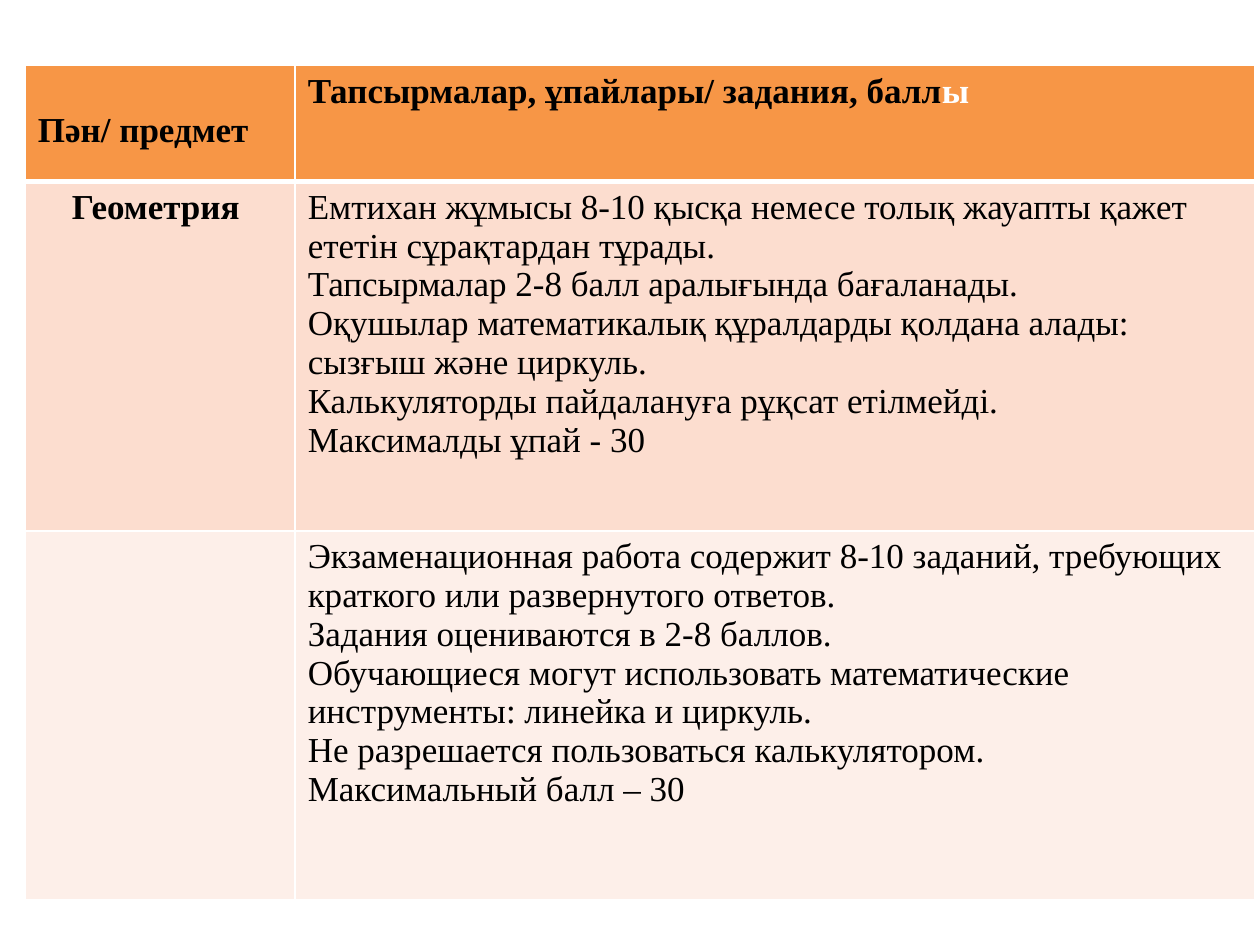
"""Build the geometry exam slide: one table of tasks and scores."""
from dataclasses import dataclass
from itertools import product

from lxml import etree
from pptx import Presentation
from pptx import util as u
from pptx.dml import color
from pptx.enum import text
from pptx.oxml import ns
from pptx.table import _Cell as TableCell


@dataclass(frozen=True)
class Theme:
    font: str = "Times New Roman"
    size: u.Pt = u.Pt(20)
    ink: str = "000000"
    line: str = "FFFFFF"
    header: str = "F79646"
    rows: tuple[str, ...] = ("F79646", "FCDDCF", "FDEFE9")
    thin: u.Pt = u.Pt(1)
    thick: u.Pt = u.Pt(3)


@dataclass(frozen=True)
class Run:
    words: str
    ink: str


@dataclass(frozen=True)
class Entry:
    paragraphs: tuple[tuple[Run, ...], ...] = ()
    align: text.PP_ALIGN = text.PP_ALIGN.LEFT
    bold: bool = False
    top: u.Cm = u.Cm(0.13)


THEME = Theme()
COLUMN_WIDTHS = (u.Cm(5.44), u.Cm(19.35))
ROW_HEIGHTS = (u.Cm(2.34), u.Cm(7.04), u.Cm(7.44))


def plain(*lines: str) -> tuple[tuple[Run, ...], ...]:
    """Turn each line into a paragraph of one run."""
    return tuple((Run(line, THEME.ink),) for line in lines)


ENTRIES = (
    (
        Entry(plain("Пән/ предмет"), text.PP_ALIGN.JUSTIFY, True, u.Cm(0.92)),
        Entry(
            ((Run("Тапсырмалар, ұпайлары/ задания, балл", THEME.ink), Run("ы", THEME.line)),),
            text.PP_ALIGN.JUSTIFY,
            True,
        ),
    ),
    (
        Entry(plain("Геометрия "), text.PP_ALIGN.CENTER, True),
        Entry(plain(
            "Емтихан жұмысы 8-10 қысқа немесе толық жауапты қажет ететін сұрақтардан тұрады.",
            "Тапсырмалар 2-8 балл аралығында бағаланады.",
            "Оқушылар математикалық құралдарды қолдана алады: сызғыш және циркуль.",
            "Калькуляторды пайдалануға рұқсат етілмейді.",
            "Максималды ұпай - 30",
        )),
    ),
    (
        Entry(),
        Entry(plain(
            "Экзаменационная работа содержит 8-10 заданий, требующих краткого или развернутого ответов.",
            "Задания оцениваются в 2-8 баллов.",
            "Обучающиеся могут использовать математические инструменты: линейка и циркуль.",
            "Не разрешается пользоваться калькулятором.",
            "Максимальный балл – 30",
        )),
    ),
)


def set_borders(cell: TableCell, row: int) -> None:
    """Draw the four cell edges, thicker under the header row."""
    widths = {
        "lnL": THEME.thin,
        "lnR": THEME.thin,
        "lnT": THEME.thick if row == 1 else THEME.thin,
        "lnB": THEME.thick if row == 0 else THEME.thin,
    }
    properties = cell._tc.get_or_add_tcPr()
    for position, (edge, width) in enumerate(widths.items()):
        line = etree.Element(ns.qn(f"a:{edge}"), w=str(int(width)))
        fill = etree.SubElement(line, ns.qn("a:solidFill"))
        etree.SubElement(fill, ns.qn("a:srgbClr"), val=THEME.line)
        properties.insert(position, line)


def fill_cell(cell: TableCell, entry: Entry, row: int) -> None:
    """Colour one cell and write its paragraphs."""
    cell.fill.solid()
    cell.fill.fore_color.rgb = color.RGBColor.from_string(THEME.rows[row])
    set_borders(cell, row)
    cell.margin_top = entry.top
    font_format = {"name": THEME.font, "size": THEME.size, "bold": entry.bold}
    for index, runs in enumerate(entry.paragraphs):
        frame = cell.text_frame
        paragraph = frame.add_paragraph() if index else frame.paragraphs[0]
        paragraph.alignment = entry.align
        for item in runs:
            run = paragraph.add_run()
            run.text = item.words
            for name, value in font_format.items():
                setattr(run.font, name, value)
            run.font.color.rgb = color.RGBColor.from_string(item.ink)


def main() -> None:
    """Create the slide and save it."""
    presentation = Presentation()
    presentation.slide_width, presentation.slide_height = u.Cm(25.4), u.Cm(19.05)
    slide = presentation.slides.add_slide(presentation.slide_layouts[6])
    table = slide.shapes.add_table(
        len(ROW_HEIGHTS), len(COLUMN_WIDTHS),
        u.Cm(0.51), u.Cm(1.32), sum(COLUMN_WIDTHS), sum(ROW_HEIGHTS),
    ).table
    for column, width in zip(table.columns, COLUMN_WIDTHS):
        column.width = width
    for table_row, height in zip(table.rows, ROW_HEIGHTS):
        table_row.height = height
    for row, column in product(range(len(ROW_HEIGHTS)), range(len(COLUMN_WIDTHS))):
        fill_cell(table.cell(row, column), ENTRIES[row][column], row)
    presentation.save("out.pptx")


if __name__ == "__main__":
    main()
